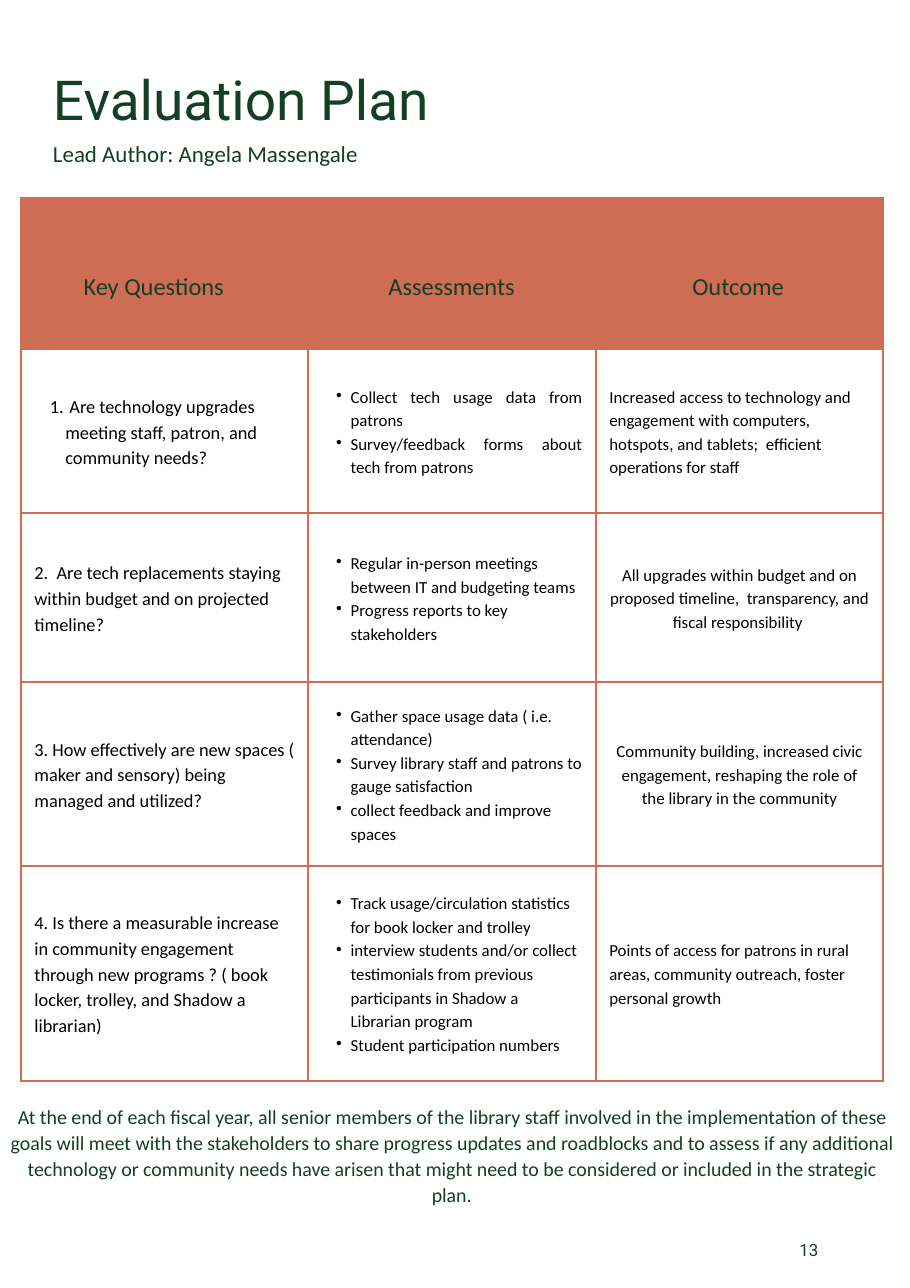
from lxml import etree
from pptx import Presentation
from pptx.dml.color import RGBColor
from pptx.enum.text import MSO_ANCHOR, PP_ALIGN
from pptx.oxml.ns import qn
from pptx.util import Pt

LEFT, CENTER, RIGHT, JUSTIFY = PP_ALIGN.LEFT, PP_ALIGN.CENTER, PP_ALIGN.RIGHT, PP_ALIGN.JUSTIFY
MIDDLE = MSO_ANCHOR.MIDDLE
GREEN, CLAY, BLACK = "133F26", "CE6D54", "000000"
BORDER_WIDTH = Pt(1.5)


def color(hex_text):
    return RGBColor.from_string(hex_text)


def write(para, text, size, spacing, align, font="Calibri", ink=GREEN, bullet=None):
    """Fill one paragraph; bullet is an optional (tag, attribute, value, indent)."""
    para.text = text
    para.alignment = align
    para.line_spacing = Pt(spacing)
    if bullet:
        tag, attribute, value, indent = bullet
        para.level = 1
        properties = para._p.get_or_add_pPr()
        properties.set("marL", str(Pt(2 * indent)))
        properties.set("indent", str(-Pt(indent)))
        etree.SubElement(properties, qn(tag)).set(attribute, value)
    para.font.name = font
    para.font.size = Pt(size)
    para.font.color.rgb = color(ink)


deck = Presentation()
deck.slide_width, deck.slide_height = Pt(594.72), Pt(841.68)
page = deck.slides.add_slide(deck.slide_layouts[6])

# Evaluation table: question, assessments, outcome and its alignment
DOT = ("a:buChar", "char", "•", 9.4)
NUMBER = ("a:buAutoNum", "type", "arabicPeriod", 10.1)
plan = [
    (" Are technology upgrades meeting staff, patron, and community needs?",
     ["Collect tech usage data from patrons ",
      "Survey/feedback forms about tech from patrons "],
     "Increased access to technology and engagement with computers, hotspots, "
     "and tablets;  efficient operations for staff", LEFT),
    ("2.  Are tech replacements staying within budget and on projected timeline?",
     ["Regular in-person meetings between IT and budgeting teams",
      "Progress reports to key stakeholders"],
     "All upgrades within budget and on proposed timeline,  transparency, "
     "and fiscal responsibility ", CENTER),
    ("3. How effectively are new spaces ( maker and sensory) being managed and utilized?",
     ["Gather space usage data ( i.e. attendance)",
      "Survey library staff and patrons to gauge satisfaction",
      "collect feedback and improve spaces"],
     "Community building, increased civic engagement, reshaping the role of "
     "the library in the community", CENTER),
    ("4. Is there a measurable increase in community engagement through new "
     "programs ? ( book locker, trolley, and Shadow a librarian)",
     ["Track usage/circulation statistics for book locker and trolley",
      "interview students and/or collect testimonials from previous "
      "participants in Shadow a Librarian program",
      "Student participation numbers"],
     "Points of access for patrons in rural areas, community outreach, "
     "foster personal growth", LEFT),
]
row_heights = [98.6, 107.3, 110.2, 120.2, 140.4]
table = page.shapes.add_table(5, 3, Pt(13.7), Pt(129.6), Pt(563.7), Pt(sum(row_heights))).table
table.first_row = table.horz_banding = False
for column in table.columns:
    column.width = Pt(187.9)
for row, height in zip(table.rows, row_heights):
    row.height = Pt(height)

for row_index, (question, assessments, outcome, outcome_align) in enumerate(plan, start=1):
    question_cell, assessment_cell, outcome_cell = table.rows[row_index].cells
    first = row_index == 1
    write(question_cell.text_frame.paragraphs[0], question, 12, 16.8, LEFT,
          ink=BLACK, bullet=NUMBER if first else None)
    frame = assessment_cell.text_frame
    for index, assessment in enumerate(assessments):
        para = frame.add_paragraph() if index else frame.paragraphs[0]
        write(para, assessment, 11, 15.4, JUSTIFY if first else LEFT, ink=BLACK, bullet=DOT)
    write(outcome_cell.text_frame.paragraphs[0], outcome, 11, 15.4, outcome_align, ink=BLACK)

# Cell fills, insets and borders
for row_index, row in enumerate(table.rows):
    for cell in row.cells:
        cell.vertical_anchor = MIDDLE
        cell.margin_left = cell.margin_right = Pt(8.8)
        cell.margin_top = cell.margin_bottom = Pt(8.8)
        if row_index == 0:
            cell.fill.solid()
            cell.fill.fore_color.rgb = color(CLAY)
        else:
            cell.fill.background()
        cell_properties = cell._tc.get_or_add_tcPr()
        for position, side in enumerate(("a:lnL", "a:lnR", "a:lnT", "a:lnB")):
            border = etree.Element(qn(side), w=str(BORDER_WIDTH))
            fill = etree.SubElement(border, qn("a:solidFill"))
            etree.SubElement(fill, qn("a:srgbClr"), val=CLAY)
            cell_properties.insert(position, border)

# Title, author, column headings, closing note and page number
closing = ("At the end of each fiscal year, all senior members of the library staff involved "
           "in the implementation of these goals will meet with the stakeholders to share "
           "progress updates and roadblocks and to assess if any additional technology or "
           "community needs have arisen that might need to be considered or included in the "
           "strategic plan.")
labels = [
    (34.6, 49.7, 475.9, 41, "Evaluation Plan", 36, 36, LEFT, "Roboto"),
    (34.6, 90, 475.9, 18.7, "Lead Author: Angela Massengale", 15, 19.5, LEFT, "Calibri"),
    (49.7, 175.7, 101.5, 20.2, "Key Questions", 16, 20.8, CENTER, "Calibri"),
    (248.4, 175.7, 93.6, 20.2, "Assessments", 16, 20.8, CENTER, "Calibri"),
    (447.1, 175.7, 74.2, 20.2, "Outcome ", 16, 20.8, CENTER, "Calibri"),
    (6.5, 720.7, 577.4, 64.8, closing, 13, 16.9, CENTER, "Calibri"),
    (486.7, 812.2, 48.2, 13, "13", 11, 11, RIGHT, "Roboto"),
]
for left, top, width, height, text, size, spacing, align, font in labels:
    box = page.shapes.add_textbox(Pt(left), Pt(top), Pt(width), Pt(height))
    frame = box.text_frame
    frame.word_wrap = True
    frame.margin_left = frame.margin_right = frame.margin_top = frame.margin_bottom = 0
    write(frame.paragraphs[0], text, size, spacing, align, font)

deck.save("out.pptx")
